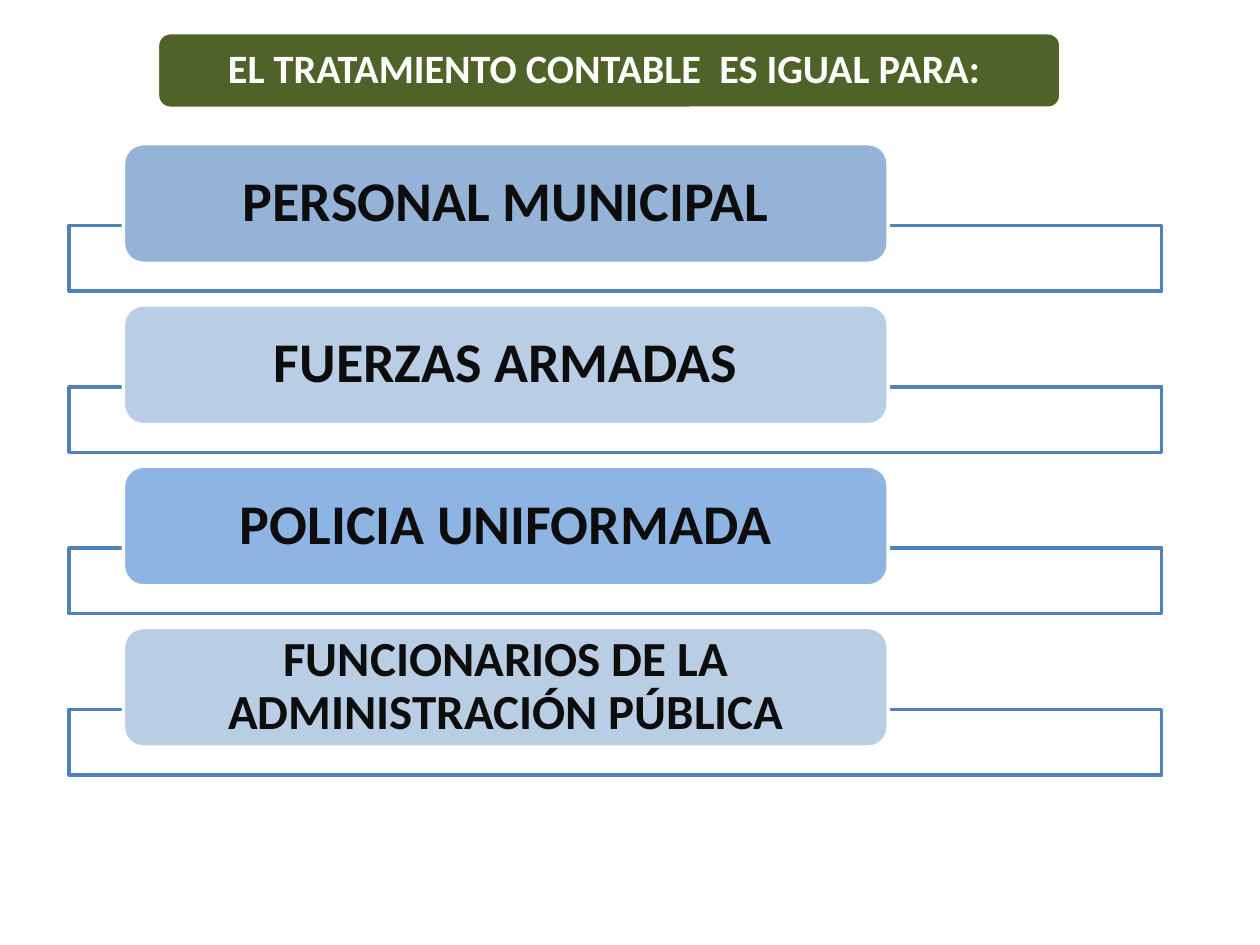
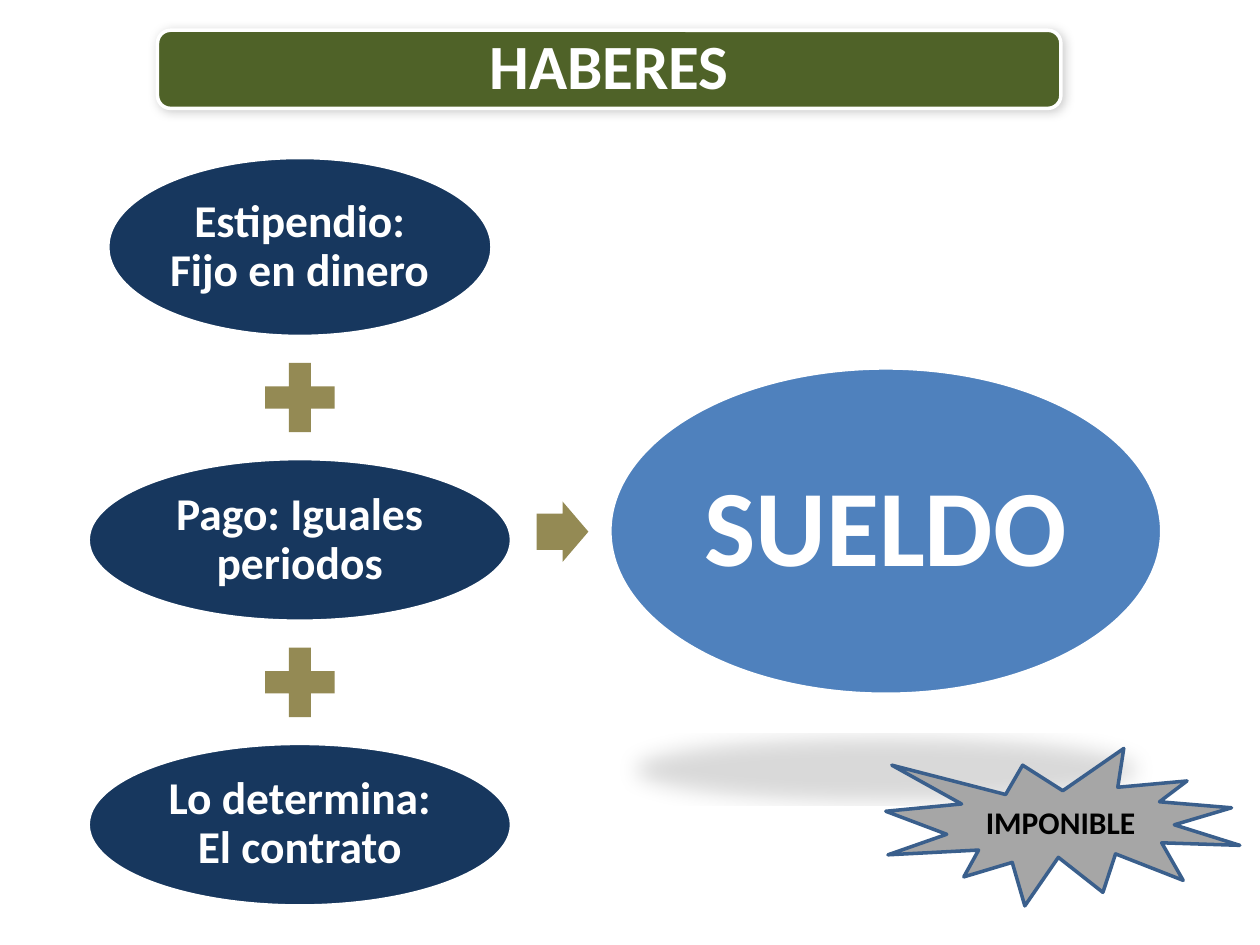
from dataclasses import dataclass
from typing import Optional

from lxml.etree import SubElement
from pptx import Presentation
from pptx.dml.color import RGBColor
from pptx.enum.shapes import MSO_SHAPE as Preset
from pptx.enum.text import MSO_ANCHOR as Anchor, MSO_AUTO_SIZE as AutoSize, PP_ALIGN as Align
from pptx.oxml.ns import qn
from pptx.util import Inches, Pt


@dataclass(frozen=True)
class Theme:
    font: str = "Calibri"
    white: str = "FFFFFF"
    black: str = "000000"
    ink: str = "0D0D0D"
    green: str = "4F6228"
    navy: str = "17375E"
    blue: str = "4F81BD"
    pale_blue: str = "B9CDE5"
    soft_blue: str = "95B3D7"
    sky_blue: str = "8EB4E3"
    olive: str = "948A54"
    grey: str = "A6A6A6"
    seal_line: str = "3A5F8C"
    line_width: int = 2
    long_title_size: int = 23
    title_size: int = 36
    group_size: int = 32
    long_group_size: int = 28
    trait_size: int = 26
    result_size: int = 62
    seal_size: int = 18


THEME = Theme()


@dataclass(frozen=True)
class Frame:
    left: float
    top: float
    width: float
    height: float

    def inches(self) -> tuple:
        return tuple(Inches(n) for n in (self.left, self.top, self.width, self.height))

    def inset(self, margin: float) -> "Frame":
        return Frame(self.left + margin, self.top + margin,
                     self.width - 2 * margin, self.height - 2 * margin)


@dataclass(frozen=True)
class Shadow:
    """Blur and distance in points, alpha and scale in percent, angle in degrees."""
    alpha: int
    blur: int
    distance: int
    angle: int
    scale_x: int = 100
    scale_y: int = 100


@dataclass(frozen=True)
class Label:
    text: str
    size: int
    color: str
    side_margin: float = 0.0
    end_margin: float = 0.0
    line_spacing: float = 0.9


@dataclass(frozen=True)
class Group:
    name: str
    fill: str
    size: int = THEME.group_size


@dataclass(frozen=True)
class Trait:
    text: str
    width: float
    height: float


GROUPS = [
    Group("PERSONAL MUNICIPAL", THEME.soft_blue),
    Group("FUERZAS ARMADAS", THEME.pale_blue),
    Group("POLICIA UNIFORMADA", THEME.sky_blue),
    Group("FUNCIONARIOS DE LA ADMINISTRACIÓN PÚBLICA", THEME.pale_blue, THEME.long_group_size),
]
TRAITS = [
    Trait("Estipendio: Fijo en dinero", 3.05, 1.42),
    Trait("Pago: Iguales periodos", 3.36, 1.29),
    Trait("Lo determina: El contrato", 3.36, 1.29),
]
BAND_SHADOW = Shadow(alpha=20, blur=6, distance=1, angle=45)
FLOOR_SHADOW = Shadow(alpha=15, blur=12, distance=25, angle=90, scale_x=90, scale_y=-19)


def rgb(color: str) -> RGBColor:
    return RGBColor.from_string(color)


def write_label(shape, label: Label) -> None:
    frame = shape.text_frame
    frame.auto_size = AutoSize.NONE
    frame.word_wrap = True
    frame.vertical_anchor = Anchor.MIDDLE
    frame.margin_left = frame.margin_right = Inches(label.side_margin)
    frame.margin_top = frame.margin_bottom = Inches(label.end_margin)
    frame.text = label.text
    para = frame.paragraphs[0]
    para.alignment = Align.CENTER
    para.line_spacing = label.line_spacing
    para.font.name = THEME.font
    para.font.size = Pt(label.size)
    para.font.bold = True
    para.font.color.rgb = rgb(label.color)


def cast_shadow(shape, shadow: Shadow) -> None:
    effects = shape.element.spPr.find(qn("a:effectLst"))
    outer = SubElement(effects, qn("a:outerShdw"), {
        "blurRad": str(Pt(shadow.blur)), "dist": str(Pt(shadow.distance)),
        "dir": str(shadow.angle * 60000),
        "sx": str(shadow.scale_x * 1000), "sy": str(shadow.scale_y * 1000),
        "algn": "b", "rotWithShape": "0"})
    color = SubElement(outer, qn("a:srgbClr"), val=THEME.black)
    SubElement(color, qn("a:alpha"), val=str(shadow.alpha * 1000))


def set_opacity(shape, percent: int) -> None:
    color = shape.element.spPr.find(qn("a:solidFill"))[0]
    SubElement(color, qn("a:alpha"), val=str(percent * 1000))


def add_box(page, preset: Preset, frame: Frame, fill: str, line: Optional[str] = None,
            label: Optional[Label] = None, shadow: Optional[Shadow] = None):
    box = page.shapes.add_shape(preset, *frame.inches())
    box.fill.solid()
    box.fill.fore_color.rgb = rgb(fill)
    if line:
        box.line.color.rgb = rgb(line)
        box.line.width = Pt(THEME.line_width)
    else:
        box.line.fill.background()
    box.shadow.inherit = False
    if shadow:
        cast_shadow(box, shadow)
    if label:
        write_label(box, label)
    return box


def add_titled_page(deck, title: str, size: int, top: float, height: float, margin: float,
                    shadow: Optional[Shadow] = None):
    """Add a title-only page whose title lies on a green band."""
    page = deck.slides.add_slide(deck.slide_layouts[5])
    heading = page.shapes.title
    band_frame = Frame(1.25, top, 7.17, height)
    band = add_box(page, Preset.ROUNDED_RECTANGLE, band_frame, THEME.green, THEME.white,
                   shadow=shadow)
    heading.element.addprevious(band.element)
    heading.left, heading.top, heading.width, heading.height = band_frame.inset(0.03).inches()
    write_label(heading, Label(title, size, THEME.white, margin, margin))
    return page


def add_groups_page(deck) -> None:
    page = add_titled_page(deck, "EL TRATAMIENTO CONTABLE  ES IGUAL PARA: ",
                           THEME.long_title_size, top=0.26, height=0.6, margin=0.1)
    first_top, step = 1.14, 1.28
    for index, group in enumerate(GROUPS):
        top = first_top + index * step
        rail = add_box(page, Preset.RECTANGLE, Frame(0.55, top + 0.65, 8.67, 0.52),
                       THEME.white, THEME.blue)
        set_opacity(rail, 90)
        add_box(page, Preset.ROUNDED_RECTANGLE, Frame(0.98, top, 6.07, 0.95),
                group.fill, THEME.white,
                Label(group.name, group.size, THEME.ink, side_margin=0.23))


def add_salary_page(deck) -> None:
    page = add_titled_page(deck, "HABERES", THEME.title_size, top=0.24, height=0.62,
                           margin=0.15, shadow=BAND_SHADOW)
    center, top, gap, plus_size = 2.38, 1.25, 0.11, 0.75
    for index, trait in enumerate(TRAITS):
        if index:
            add_box(page, Preset.MATH_PLUS,
                    Frame(center - plus_size / 2, top, plus_size, plus_size), THEME.olive)
            top += plus_size + gap
        add_box(page, Preset.OVAL,
                Frame(center - trait.width / 2, top, trait.width, trait.height),
                THEME.navy, THEME.white,
                Label(trait.text, THEME.trait_size, THEME.white, 0.04, 0.04))
        top += trait.height + gap

    arrow = add_box(page, Preset.RIGHT_ARROW, Frame(4.26, 3.98, 0.41, 0.48), THEME.olive)
    arrow.adjustments[0] = 0.6
    add_box(page, Preset.OVAL, Frame(4.84, 2.92, 4.38, 2.59), THEME.blue, THEME.white,
            Label("SUELDO", THEME.result_size, THEME.white, 0.09, 0.09), FLOOR_SHADOW)
    add_box(page, Preset.EXPLOSION1, Frame(7.03, 5.94, 2.81, 1.25), THEME.grey,
            THEME.seal_line,
            Label("IMPONIBLE", THEME.seal_size, THEME.black, 0.1, 0.05, line_spacing=1.0))


def main() -> None:
    deck = Presentation()
    deck.slide_width, deck.slide_height = Inches(10), Inches(7.5)
    add_groups_page(deck)
    add_salary_page(deck)
    deck.save("out.pptx")


if __name__ == "__main__":
    main()
